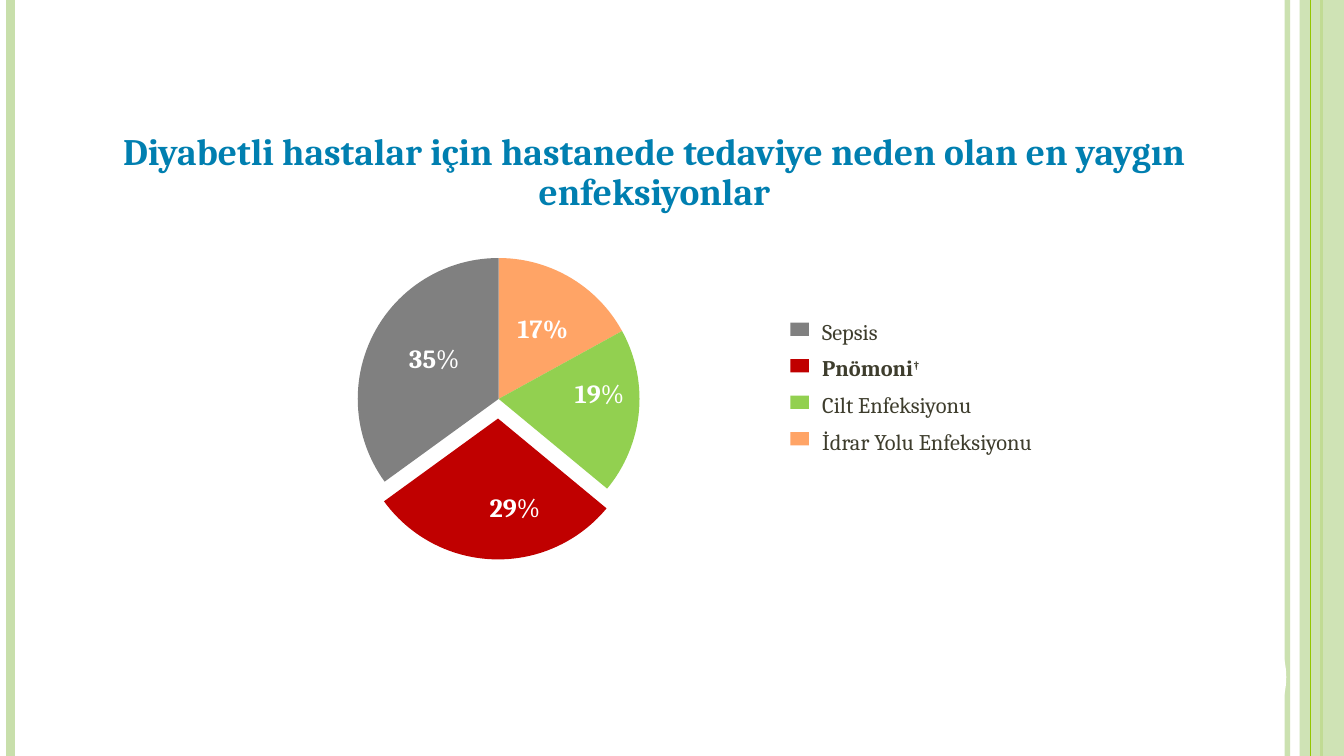
from lxml.etree import SubElement
from pptx import Presentation
from pptx.chart.data import CategoryChartData
from pptx.dml.color import RGBColor
from pptx.enum.chart import XL_CHART_TYPE
from pptx.enum.shapes import MSO_CONNECTOR, MSO_SHAPE
from pptx.enum.text import MSO_ANCHOR, MSO_AUTO_SIZE, PP_ALIGN
from pptx.oxml import parse_xml
from pptx.oxml.ns import nsdecls, qn
from pptx.util import Cm, Pt

FONT = "Cambria"
WIDTH, HEIGHT = 25.4, 14.29
PALE_GREEN = RGBColor(0xC8, 0xDF, 0xAB)
LIME = RGBColor(0x94, 0xC6, 0x00)
BLUE = RGBColor(0x00, 0x7F, 0xB0)
WHITE = RGBColor(0xFF, 0xFF, 0xFF)
INK = RGBColor(0x3E, 0x3D, 0x2D)
ORANGE = RGBColor(0xFF, 0xA4, 0x66)
GREEN = RGBColor(0x92, 0xD0, 0x50)
RED = RGBColor(0xC0, 0x00, 0x00)
GRAY = RGBColor(0x80, 0x80, 0x80)

# Value, slice colour, and left and top of the percentage label in cm
SLICES = [
    (17, ORANGE, 9.75, 5.97),
    (19, GREEN, 10.82, 7.21),
    (29, RED, 9.22, 9.35),
    (35, GRAY, 7.7, 6.53),
]
PNEUMONIA = 2  # index of the pulled-out slice
LEGEND = [
    ("Sepsis", GRAY),
    ("Pnömoni", RED),
    ("Cilt Enfeksiyonu", GREEN),
    ("İdrar Yolu Enfeksiyonu", ORANGE),
]


def set_alpha(fill_parent, percent):
    """Set the opacity of the solid colour found inside an element."""
    color = fill_parent.find(".//" + qn("a:srgbClr"))
    SubElement(color, qn("a:alpha")).set("val", str(percent * 1000))


def add_span(para, text, size, color, bold=False, baseline=None):
    span = para.add_run()
    span.text = text
    span.font.name = FONT
    span.font.size = Pt(size)
    span.font.bold = bold
    span.font.color.rgb = color
    if baseline:
        span._r.get_or_add_rPr().set("baseline", str(baseline * 1000))


def format_para(para, align):
    para.alignment = align
    para.line_spacing = 0.9
    para.space_before = Pt(6)


def add_text(page, left, top, width, height, spans, align=PP_ALIGN.LEFT, **style):
    """Add a box without margins; each span is a text and its own format."""
    box = page.shapes.add_textbox(Cm(left), Cm(top), Cm(width), Cm(height))
    frame = box.text_frame
    frame.word_wrap = True
    frame.margin_left = frame.margin_right = 0
    frame.margin_top = frame.margin_bottom = 0
    para = frame.paragraphs[0]
    format_para(para, align)
    for text, changes in spans:
        add_span(para, text, **{**style, **changes})


def add_shape(page, kind, left, top, width, height, color, alpha=None):
    shape = page.shapes.add_shape(kind, Cm(left), Cm(top), Cm(width), Cm(height))
    shape.shadow.inherit = False
    shape.fill.solid()
    shape.fill.fore_color.rgb = color
    shape.line.fill.background()
    if alpha:
        set_alpha(shape._element.spPr, alpha)


def add_stripe(page, x, color, weight, alpha=None):
    """Draw a line over the full height of the page."""
    line = page.shapes.add_connector(
        MSO_CONNECTOR.STRAIGHT, Cm(x), 0, Cm(x), Cm(HEIGHT))
    line.line.color.rgb = color
    line.line.width = Pt(weight)
    if alpha:
        set_alpha(line._element.spPr, alpha)
    SubElement(line._element.spPr, qn("a:effectLst"))


def add_side_bands(page):
    add_stripe(page, 24.33, PALE_GREEN, 3, alpha=93)
    add_stripe(page, 0.2, PALE_GREEN, 4.5)
    add_stripe(page, 24.97, LIME, 1.5)
    add_shape(page, MSO_SHAPE.RECTANGLE, 24.56, 0, 0.84, HEIGHT, PALE_GREEN, alpha=87)
    add_stripe(page, 24.77, LIME, 0.75)


def fill_title(page, text):
    title = page.shapes.title
    title.left, title.top, title.width, title.height = 0, Cm(2.39), Cm(24.74), Cm(1.8)
    frame = title.text_frame
    frame.word_wrap = True
    frame.auto_size = MSO_AUTO_SIZE.NONE
    frame.vertical_anchor = MSO_ANCHOR.TOP
    format_para(frame.paragraphs[0], PP_ALIGN.CENTER)
    add_span(frame.paragraphs[0], text, 20, BLUE, bold=True)


def place_plot(chart, x, y, w, h):
    """Fix the inner plot area as fractions of the chart."""
    area = chart._chartSpace.chart.plotArea
    for old in area.findall(qn("c:layout")):
        area.remove(old)
    area.insert(0, parse_xml(
        f'<c:layout {nsdecls("c")}><c:manualLayout><c:layoutTarget val="inner"/>'
        '<c:xMode val="edge"/><c:yMode val="edge"/>'
        f'<c:x val="{x}"/><c:y val="{y}"/><c:w val="{w}"/><c:h val="{h}"/>'
        '</c:manualLayout></c:layout>'))


def add_pie(page):
    data = CategoryChartData()
    data.categories = [str(number + 1) for number in range(len(SLICES))]
    data.add_series("Series 1", [value for value, *_ in SLICES])
    chart = page.shapes.add_chart(
        XL_CHART_TYPE.PIE, Cm(4.88), Cm(4.7), Cm(9.09), Cm(5.92), data).chart
    chart.has_title = False
    chart.has_legend = False
    chart.font.name = FONT
    chart.font.size = Pt(18)
    place_plot(chart, 0.11, 0.03, 0.78, 0.9)

    series = chart.plots[0].series[0]
    for index, (_, color, _, _) in enumerate(SLICES):
        fill = series.points[index].format.fill
        fill.solid()
        fill.fore_color.rgb = color

    # Pull the pneumonia slice out of the pie
    point = series._element.findall(qn("c:dPt"))[PNEUMONIA]
    point.find(qn("c:spPr")).addprevious(
        parse_xml(f'<c:explosion {nsdecls("c")} val="14"/>'))


def add_percentages(page):
    for index, (value, _, left, top) in enumerate(SLICES):
        add_text(page, left, top, 1.02, 0.53,
                 [(str(value), {"bold": True}), ("%", {"bold": index == 0})],
                 align=PP_ALIGN.CENTER, size=14, color=WHITE)


def add_legend(page):
    for row, (name, color) in enumerate(LEGEND):
        top = 6.07 + 0.69 * row
        spans = [(name, {})]
        if color == RED:
            spans.append(("†", {"baseline": 30}))
        add_shape(page, MSO_SHAPE.RECTANGLE, 14.94, top + 0.03, 0.35, 0.25, color)
        add_text(page, 15.54, top, 4.17, 0.46, spans,
                 size=12, color=INK, bold=color == RED)


def main():
    deck = Presentation()
    deck.slide_width, deck.slide_height = Cm(WIDTH), Cm(HEIGHT)
    page = deck.slides.add_slide(deck.slide_layouts[5])

    add_side_bands(page)
    fill_title(page, "Diyabetli hastalar için hastanede tedaviye neden olan "
                     "en yaygın enfeksiyonlar")
    add_pie(page)
    add_percentages(page)
    add_legend(page)
    # White disc that notches the right-hand stripe
    add_shape(page, MSO_SHAPE.OVAL, 22.05, 11.53, 2.26, 2.54, WHITE)

    deck.save("out.pptx")


if __name__ == "__main__":
    main()
